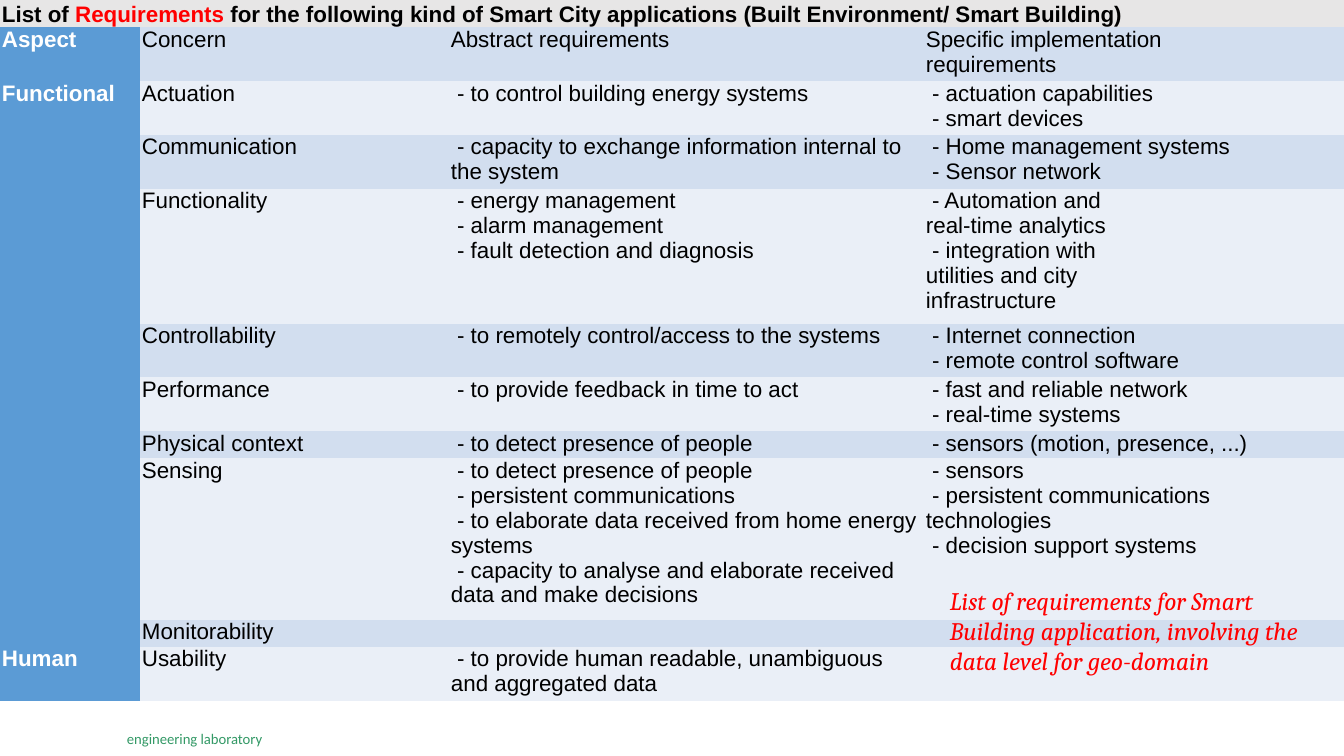
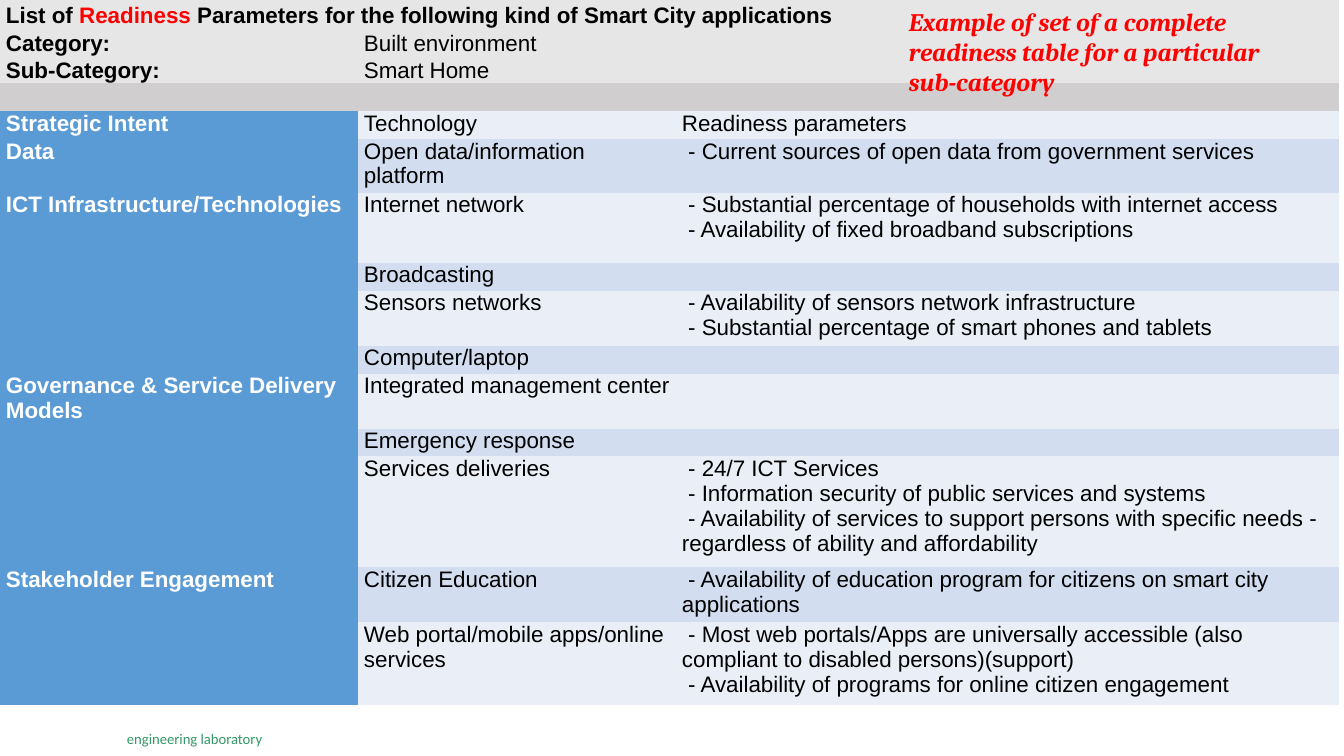
from dataclasses import dataclass
from typing import Any, NamedTuple

from lxml import etree
from pptx import Presentation
from pptx import util as u
from pptx.dml.color import RGBColor
from pptx.enum import text
from pptx.oxml import ns

PX_PER_INCH = 100.8
WIDTH, HEIGHT = 1344, 756

# Shared colours and formats
BLACK, WHITE, RED, GREEN = "000000", "FFFFFF", "FF0000", "339966"
HEAD, DIVIDER, ASPECT = "E7E6E6", "D0CECE", "5B9BD5"
BANDS = ("EAEFF7", "D2DEEF")
CELL_FORMAT = {"name": "Arial", "size": u.Pt(16)}
NOTE_FORMAT = {"name": "Cambria", "size": u.Pt(18), "italic": True}
FOOTER_FORMAT = {"name": "Calibri", "size": u.Pt(10.5)}
NO_GRID_STYLE = "{2D5ABB26-0587-4C30-8999-92F81FD0307C}"


class Row(NamedTuple):
    height: int
    cells: tuple[str, ...] = ()


class Note(NamedTuple):
    left: int
    top: int
    width: int
    height: int
    words: str
    bold: bool


@dataclass(frozen=True)
class Sheet:
    title: tuple[str, str, str]
    columns: tuple[int, ...]
    margin: int
    head_rows: int
    divider_rows: int
    rows: tuple[Row, ...]
    note: Note


SHEETS = (
    Sheet(
        title=("List of ", "Requirements",
               " for the following kind of Smart City applications (Built Environment/ Smart Building)"),
        columns=(140, 309, 475, 420),
        margin=2,
        head_rows=1,
        divider_rows=0,
        rows=(
            Row(27),
            Row(54, ("Aspect", "Concern", "Abstract requirements",
                     "Specific implementation\nrequirements")),
            Row(53, ("Functional", "Actuation", " - to control building energy systems",
                     " - actuation capabilities\n - smart devices")),
            Row(54, ("", "Communication",
                     " - capacity to exchange information internal to the system",
                     " - Home management systems\n - Sensor network")),
            Row(135, ("", "Functionality",
                      " - energy management\n - alarm management\n - fault detection and diagnosis",
                      " - Automation and\nreal-time analytics\n - integration with\n"
                      "utilities and city\ninfrastructure")),
            Row(53, ("", "Controllability", " - to remotely control/access to the systems",
                     " - Internet connection\n - remote control software")),
            Row(54, ("", "Performance", " - to provide feedback in time to act",
                     " - fast and reliable network\n - real-time systems")),
            Row(27, ("", "Physical context", " - to detect presence of people",
                     " - sensors (motion, presence, ...)")),
            Row(161, ("", "Sensing",
                      " - to detect presence of people\n - persistent communications\n"
                      " - to elaborate data received from home energy systems\n"
                      " - capacity to analyse and elaborate received data and make decisions",
                      " - sensors\n - persistent communications technologies\n"
                      " - decision support systems")),
            Row(27, ("", "Monitorability")),
            Row(54, ("Human", "Usability",
                     " - to provide human readable, unambiguous and aggregated data")),
        ),
        note=Note(940, 580, 386, 102,
                  "List of requirements for Smart Building application, "
                  "involving the data level for geo-domain", False),
    ),
    Sheet(
        title=("List of ", "Readiness ",
               "Parameters for the following kind of Smart City applications"),
        columns=(358, 318, 663),
        margin=6,
        head_rows=3,
        divider_rows=1,
        rows=(
            Row(28),
            Row(28, ("Category:", "Built environment")),
            Row(27, ("Sub-Category:", "Smart Home")),
            Row(28),
            Row(28, ("Strategic Intent", "Technology", "Readiness parameters")),
            Row(53, ("Data", "Open data/information platform",
                     " - Current sources of open data from government services")),
            Row(70, ("ICT Infrastructure/Technologies", "Internet network",
                     " - Substantial percentage of households with internet access\n"
                     " - Availability of fixed broadband subscriptions")),
            Row(28, ("", "Broadcasting")),
            Row(55, ("", "Sensors networks",
                     " - Availability of sensors network infrastructure\n"
                     " - Substantial percentage of smart phones and tablets")),
            Row(28, ("", "Computer/laptop")),
            Row(55, ("Governance & Service Delivery Models", "Integrated management center")),
            Row(28, ("", "Emergency response")),
            Row(111, ("", "Services deliveries",
                      " - 24/7 ICT Services\n"
                      " - Information security of public services and systems\n"
                      " - Availability of services to support persons with specific needs - "
                      "regardless of ability and affordability")),
            Row(55, ("Stakeholder Engagement", "Citizen Education",
                     " - Availability of education program for citizens on smart city applications")),
            Row(83, ("", "Web portal/mobile apps/online services",
                     " - Most web portals/Apps are universally accessible "
                     "(also compliant to disabled persons)(support)\n"
                     " - Availability of programs for online citizen engagement")),
        ),
        note=Note(899, 1, 411, 102,
                  "Example of set of a complete readiness table for a particular sub-category",
                  True),
    ),
)


def px(length: int) -> u.Emu:
    return u.Emu(round(length * 914400 / PX_PER_INCH))


def colour(value: str) -> RGBColor:
    return RGBColor.from_string(value)


def set_values(target: Any, values: dict[str, Any]) -> None:
    for name, value in values.items():
        setattr(target, name, value)


def add_span(para: Any, words: str, ink: str, values: dict[str, Any]) -> None:
    """Add text to a paragraph, with a line break at each newline."""
    for index, line in enumerate(words.split("\n")):
        if index:
            para.add_line_break()
        span = para.add_run()
        span.text = line
        set_values(span.font, values)
        span.font.color.rgb = colour(ink)


def add_text(page: Any, place: tuple[int, int, int, int], words: str, ink: str,
             values: dict[str, Any], frame: dict[str, Any]) -> Any:
    box = page.shapes.add_textbox(*map(px, place))
    set_values(box.text_frame, frame)
    add_span(box.text_frame.paragraphs[0], words, ink, values)
    return box


def fill_cell(cell: Any, words: str, fill: str, ink: str, bold: bool) -> None:
    cell.fill.solid()
    cell.fill.fore_color.rgb = colour(fill)
    para = cell.text_frame.paragraphs[0]
    if words:
        add_span(para, words, ink, CELL_FORMAT | {"bold": bold})
    else:
        # An empty cell keeps the text size, so that its row does not grow
        etree.SubElement(para._p, ns.qn("a:endParaRPr"), sz="1600")


def add_sheet_table(page: Any, sheet: Sheet) -> None:
    frame = page.shapes.add_table(
        len(sheet.rows), len(sheet.columns), 0, 0,
        px(sum(sheet.columns)), px(sum(row.height for row in sheet.rows)))
    table = frame.table
    set_values(table, {"first_row": False, "horz_banding": False})
    for style in frame.element.iter(ns.qn("a:tableStyleId")):
        style.text = NO_GRID_STYLE
    for column, width in zip(table.columns, sheet.columns):
        column.width = px(width)

    # Rows: head, divider, then bands beside the aspect column
    first_band = sheet.head_rows + sheet.divider_rows
    margins = {"margin_left": px(sheet.margin), "margin_right": px(sheet.margin),
               "margin_top": 0, "margin_bottom": 0}
    for r, row in enumerate(sheet.rows):
        table.rows[r].height = px(row.height)
        in_head = r < sheet.head_rows
        for c in range(len(sheet.columns)):
            cell = table.cell(r, c)
            set_values(cell, margins)
            if in_head:
                fill = HEAD
                cell.vertical_anchor = text.MSO_ANCHOR.BOTTOM
            elif r < first_band:
                fill = DIVIDER
            else:
                fill = BANDS[r % 2] if c else ASPECT
            words = row.cells[c] if c < len(row.cells) else ""
            ink = WHITE if c == 0 and not in_head else BLACK
            fill_cell(cell, words, fill, ink, bold=c == 0)

    # Title across the first row
    title = table.cell(0, 0)
    title.merge(table.cell(0, len(sheet.columns) - 1))
    para = title.text_frame.paragraphs[0]
    para.clear()
    for words, ink in zip(sheet.title, (BLACK, RED, BLACK)):
        add_span(para, words, ink, CELL_FORMAT | {"bold": True})


def add_footer(layout: Any, page: Any) -> None:
    """Place the footer on the layout, so that every page shows it."""
    frame = {"word_wrap": False, "margin_left": 0, "margin_right": 0,
             "margin_top": 0, "margin_bottom": 0}
    box = add_text(page, (127, 730, 138, 18), "engineering laboratory",
                   GREEN, FOOTER_FORMAT, frame)
    layout.shapes.element.append(box.element)


def main() -> None:
    deck = Presentation()
    deck.slide_width, deck.slide_height = px(WIDTH), px(HEIGHT)
    layout = deck.slide_layouts[6]
    pages = [deck.slides.add_slide(layout) for _ in SHEETS]
    add_footer(layout, pages[0])
    for page, sheet in zip(pages, SHEETS):
        add_sheet_table(page, sheet)
        note = sheet.note
        add_text(page, note[:4], note.words, RED,
                 NOTE_FORMAT | {"bold": note.bold}, {"word_wrap": True})
    deck.save("out.pptx")


if __name__ == "__main__":
    main()
